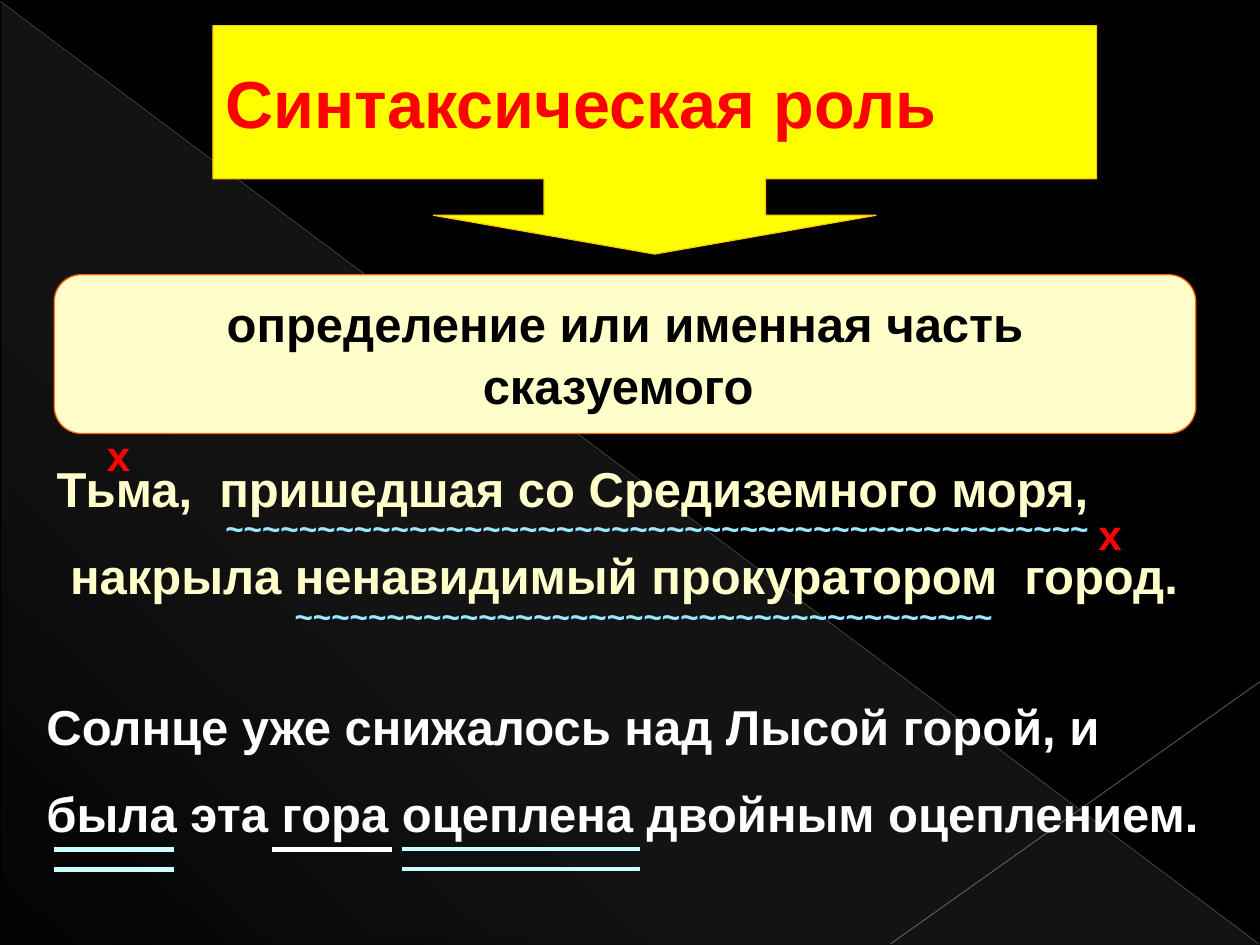
from dataclasses import dataclass

from lxml.etree import SubElement
from pptx import Presentation
from pptx.dml.color import RGBColor
from pptx.enum.shapes import MSO_CONNECTOR as Connector, MSO_SHAPE as Shape
from pptx.enum.text import MSO_ANCHOR as Anchor, PP_ALIGN as Align
from pptx.oxml import parse_xml
from pptx.oxml.ns import nsdecls, qn
from pptx.util import Pt


@dataclass(frozen=True)
class Theme:
    font: str = "Arial"
    background: str = "000000"
    dark: str = "000000"
    red: str = "FF0000"
    yellow: str = "FFFF00"
    gold: str = "FFCC00"
    cream: str = "FFFFCC"
    orange: str = "FF6600"
    white: str = "FFFFFF"
    wave: str = "9CE7FE"
    aqua: str = "CCFFFF"
    glow: str = "D2D2D2"
    title_size: float = 38
    body_size: float = 28
    mark_size: float = 24
    wave_size: float = 18


THEME = Theme()


def rgb(value):
    return RGBColor.from_string(value)


def box(left, top, width, height):
    return [Pt(value) for value in (left, top, width, height)]


class SlideBuilder:
    """Holds the theme and the slide that receives the elements."""

    def __init__(self, slide, theme):
        self.slide = slide
        self.theme = theme
        fill = slide.background.fill
        fill.solid()
        fill.fore_color.rgb = rgb(theme.background)

    def format_text(self, shape, lines, color, size, align=Align.LEFT,
                    anchor=Anchor.TOP, gap=0):
        frame = shape.text_frame
        frame.text = "\n".join(lines)
        frame_format = {
            "word_wrap": True, "vertical_anchor": anchor,
            "margin_left": Pt(7.2), "margin_right": Pt(7.2),
            "margin_top": Pt(3.6), "margin_bottom": Pt(3.6),
        }
        for name, value in frame_format.items():
            setattr(frame, name, value)
        font_format = {"name": self.theme.font, "size": Pt(size), "bold": True}
        for index, paragraph in enumerate(frame.paragraphs):
            paragraph.alignment = align
            paragraph.space_before = Pt(gap if index else 0)
            for run in paragraph.runs:
                for name, value in font_format.items():
                    setattr(run.font, name, value)
                run.font.color.rgb = rgb(color)
        return shape

    def title(self, text, area):
        shape = self.slide.shapes.title
        for name, value in zip(("left", "top", "width", "height"), box(*area)):
            setattr(shape, name, value)
        return self.format_text(shape, [text], self.theme.red,
                                self.theme.title_size, anchor=Anchor.MIDDLE)

    def text(self, lines, area, color, size, gap=0):
        shape = self.slide.shapes.add_textbox(*box(*area))
        return self.format_text(shape, lines, color, size, gap=gap)

    def panel(self, kind, area, fill, line, adjustments):
        shape = self.slide.shapes.add_shape(kind, *box(*area))
        shape.shadow.inherit = False
        shape.fill.solid()
        shape.fill.fore_color.rgb = rgb(fill)
        shape.line.color.rgb = rgb(line)
        shape.line.width = Pt(0.75)
        for index, value in enumerate(adjustments):
            shape.adjustments[index] = value
        return shape

    def glow(self, area, stops, angle):
        """Add a right triangle; stops are (position, opacity) in percent."""
        shape = self.slide.shapes.add_shape(Shape.RIGHT_TRIANGLE, *box(*area))
        shape.shadow.inherit = False
        shape.line.fill.background()
        stop_xml = "".join(
            f'<a:gs pos="{position * 1000}"><a:srgbClr val="{self.theme.glow}">'
            f'<a:alpha val="{opacity * 1000}"/></a:srgbClr></a:gs>'
            for position, opacity in stops)
        gradient = parse_xml(
            f'<a:gradFill {nsdecls("a")} rotWithShape="1"><a:gsLst>{stop_xml}'
            f'</a:gsLst><a:lin ang="{angle * 60000}" scaled="0"/></a:gradFill>')
        shape.element.spPr.find(qn("a:prstGeom")).addnext(gradient)
        return shape

    def line(self, start, end, color, width, opacity=100):
        points = [Pt(value) for value in (*start, *end)]
        line = self.slide.shapes.add_connector(Connector.STRAIGHT, *points)
        line.line.color.rgb = rgb(color)
        line.line.width = Pt(width)
        properties = line.element.spPr
        if opacity < 100:
            alpha = SubElement(next(properties.iter(qn("a:srgbClr"))), qn("a:alpha"))
            alpha.set("val", str(opacity * 1000))
        SubElement(properties, qn("a:effectLst"))
        return line

    def underline(self, left, right, rows, color, width):
        for y in rows:
            self.line((left, y), (right, y), color, width)


def main():
    presentation = Presentation()
    presentation.slide_width, presentation.slide_height = Pt(720), Pt(540)
    slide = presentation.slides.add_slide(presentation.slide_layouts[5])
    builder = SlideBuilder(slide, THEME)

    builder.glow((0.7, 1.4, 719.3, 538.6), [(0, 10), (70, 8), (100, 1)], 133)
    builder.line((0, 0.7), (719.3, 539.3), "BFBFBF", 0.39, 35)
    builder.line((720, 389.5), (509, 539.3), "C6C6C6", 0.47, 45)

    body = THEME.body_size
    participles = builder.text(
        ["Тьма,  пришедшая со Средиземного моря,",
         "накрыла ненавидимый прокуратором  город."],
        (25.2, 258.5, 669, 91.4), THEME.cream, body, gap=16)
    second_line = participles.text_frame.paragraphs[1]
    second_line._p.get_or_add_pPr().set("marL", str(Pt(7.8)))
    builder.text(
        ["Солнце уже снижалось над Лысой горой, и",
         "была эта гора оцеплена двойным оцеплением."],
        (19.5, 394.5, 700.5, 91.4), THEME.white, body, gap=16)

    callout = builder.panel(
        Shape.DOWN_ARROW_CALLOUT, (121.7, 14.8, 504.9, 130.4),
        THEME.yellow, THEME.gold, (0.97, 0.97, 0.17, 0.67))
    title = builder.title("Синтаксическая роль", (121.7, 14.8, 504.9, 87))
    callout.element.addnext(title.element)

    answer = builder.panel(Shape.ROUNDED_RECTANGLE, (31, 157, 652.3, 90.7),
                           THEME.cream, THEME.orange, (0.17,))
    builder.format_text(answer, ["определение или именная часть", "сказуемого "],
                        THEME.dark, body, Align.CENTER, Anchor.MIDDLE, gap=1.5)

    for left, top in ((54, 242), (620.6, 287.3)):
        builder.text(["х"], (left, top, 51, 36), THEME.red, THEME.mark_size)
    for left, top, width, count in ((121.7, 287.3, 572.4, 47),
                                    (161.3, 337.7, 419.8, 38)):
        builder.text(["~" * count], (left, top, width, 29),
                     THEME.wave, THEME.wave_size)

    upper, lower = 485.3, 496.8
    builder.underline(229.7, 365.8, (upper, lower), THEME.aqua, 2.25)
    builder.underline(31, 99.4, (upper, lower), THEME.aqua, 3)
    builder.underline(155.5, 223.9, (upper,), THEME.white, 3)

    presentation.save("out.pptx")


if __name__ == "__main__":
    main()
